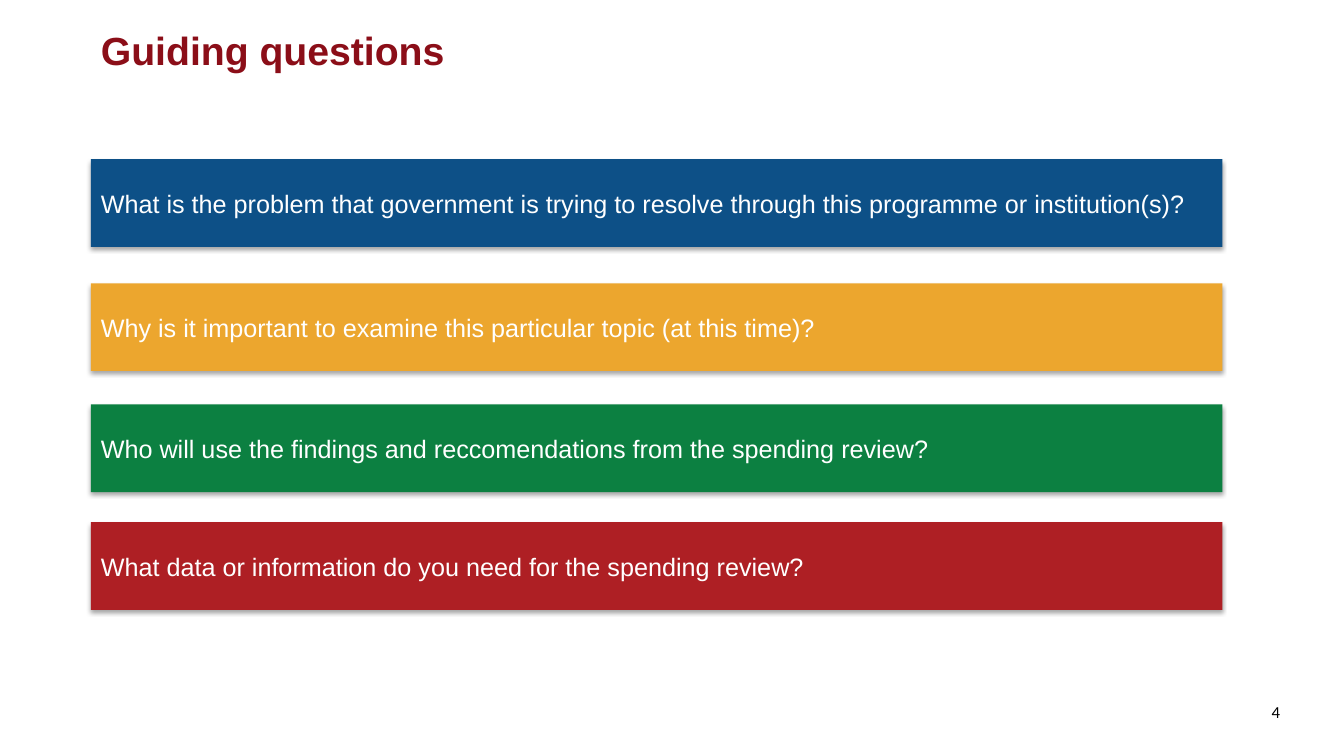
from lxml.etree import SubElement
from pptx import Presentation
from pptx.dml.color import RGBColor as RGB
from pptx.enum.shapes import MSO_SHAPE as SHAPE
from pptx.enum.text import MSO_ANCHOR as ANCHOR, MSO_AUTO_SIZE as AUTOSIZE, PP_ALIGN as ALIGN
from pptx.oxml.ns import qn
from pptx.util import Cm, Pt

COLORS = {
    "title": "8B0E18",
    "blue": "0D5087",
    "amber": "ECA62E",
    "green": "0C8041",
    "red": "AE1F24",
    "white": "FFFFFF",
    "black": "000000",
}
TITLE = "Guiding questions"
PAGE = "4"
QUESTIONS = [
    ("What is the problem that government is trying to resolve through this programme or institution(s)?", "blue", 4.01),
    ("Why is it important to examine this particular topic (at this time)?", "amber", 7.14),
    ("Who will use the findings and reccomendations from the spending review?", "green", 10.19),
    ("What data or information do you need for the spending review?", "red", 13.16),
]
LEFT, BAR_W, BAR_H = 2.29, 28.52, 2.21


def rgb(name):
    return RGB.from_string(COLORS[name])


def write(sp, text, size, color, font="Arial", bold=False, align=ALIGN.LEFT, anchor=ANCHOR.MIDDLE):
    tf = sp.text_frame
    tf.text = text
    tf.word_wrap = True
    tf.auto_size = AUTOSIZE.NONE
    tf.vertical_anchor = anchor
    p = tf.paragraphs[0]
    p.alignment = align
    p.font.name = font
    p.font.size = Pt(size)
    p.font.bold = bold
    p.font.color.rgb = rgb(color)


def add_shadow(sp):
    sp.shadow.inherit = False
    effects = sp._element.spPr.find(qn("a:effectLst"))
    shadow = SubElement(effects, qn("a:outerShdw"), blurRad=str(Pt(3.1)), dist=str(Pt(1.8)),
                        dir="5400000", rotWithShape="0")
    black = SubElement(shadow, qn("a:srgbClr"), val=COLORS["black"])
    SubElement(black, qn("a:alpha"), val="35000")


prs = Presentation()
prs.slide_width, prs.slide_height = Cm(33.87), Cm(19.05)
s = prs.slides.add_slide(prs.slide_layouts[5])

title = s.shapes.title
title.left, title.top, title.width, title.height = Cm(LEFT), Cm(0.69), Cm(29.24), Cm(1.14)
write(title, TITLE, 28, "title", bold=True)

for question, color, top in QUESTIONS:
    sp = s.shapes.add_shape(SHAPE.RECTANGLE, Cm(LEFT), Cm(top), Cm(BAR_W), Cm(BAR_H))
    sp.fill.solid()
    sp.fill.fore_color.rgb = rgb(color)
    sp.line.fill.background()
    add_shadow(sp)
    write(sp, question, 18, "white")

number = s.shapes.add_textbox(Cm(30.58), Cm(17.55), Cm(1.93), Cm(0.99))
write(number, PAGE, 12, "black", font="Calibri", align=ALIGN.RIGHT, anchor=ANCHOR.TOP)

prs.save("out.pptx")
